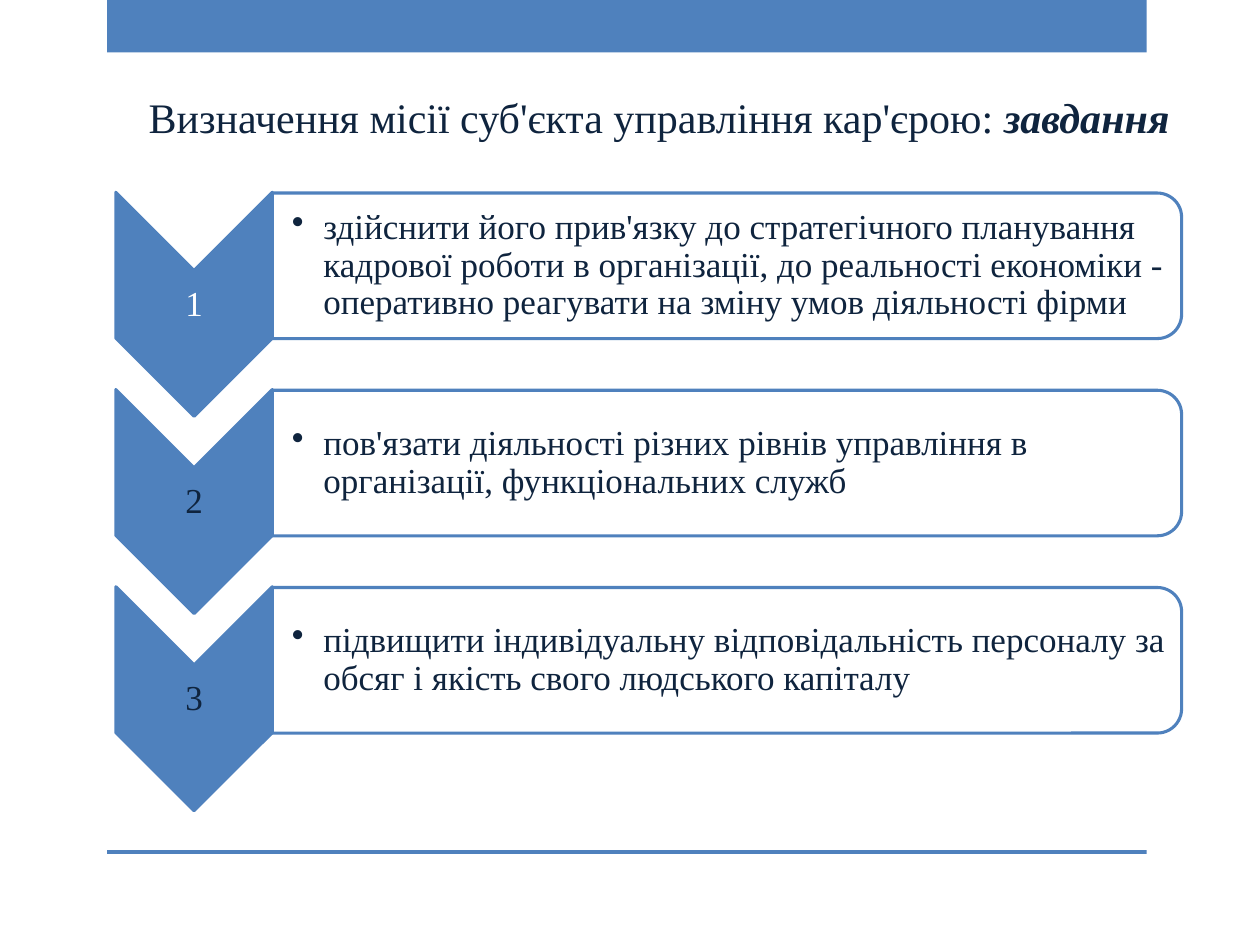
"""Build the slide on the tasks of defining a career management mission."""
from dataclasses import dataclass

from lxml import etree
from pptx import Presentation
from pptx.dml.color import RGBColor
from pptx.enum.shapes import MSO_SHAPE
from pptx.enum.text import MSO_ANCHOR, PP_ALIGN
from pptx.oxml.ns import qn
from pptx.util import Pt

RECTANGLE = MSO_SHAPE.RECTANGLE
CHEVRON = MSO_SHAPE.CHEVRON
ROUND_TOP = MSO_SHAPE.ROUND_2_SAME_RECTANGLE
MIDDLE = MSO_ANCHOR.MIDDLE
TOP = MSO_ANCHOR.TOP
LEFT = PP_ALIGN.LEFT
CENTER = PP_ALIGN.CENTER


@dataclass(frozen=True)
class Theme:
    font: str = "Times New Roman"
    accent: RGBColor = RGBColor(0x4F, 0x81, 0xBD)
    ink: RGBColor = RGBColor(0x0F, 0x24, 0x3E)
    white: RGBColor = RGBColor(0xFF, 0xFF, 0xFF)
    title_size: float = 24
    body_size: float = 20
    outline: float = 1.75


@dataclass(frozen=True)
class Span:
    text: str
    emphasis: bool = False


@dataclass(frozen=True)
class Task:
    number: str
    text: str
    number_color: RGBColor


THEME = Theme()
TASKS = (
    Task("1", "здійснити його прив'язку до стратегічного планування кадрової роботи "
         "в організації, до реальності економіки - оперативно реагувати на зміну "
         "умов діяльності фірми", THEME.white),
    Task("2", "пов'язати діяльності різних рівнів управління в організації, "
         "функціональних служб", THEME.ink),
    Task("3", "підвищити індивідуальну відповідальність персоналу за обсяг і якість "
         "свого людського капіталу", THEME.ink),
)
TITLE = (Span("Визначення місії суб'єкта управління кар'єрою: "),
         Span("завдання", emphasis=True))
FIRST_TOP = 114.4
TASK_STEP = 112.7


def add_figure(shapes, kind, left: float, top: float, width: float, height: float,
               fill: RGBColor, outlined: bool = False, turned: bool = False):
    """Draw a filled shape whose visible bounds are given, turned by 90 degrees if asked."""
    if turned:
        left += (width - height) / 2
        top += (height - width) / 2
        width, height = height, width
    figure = shapes.add_shape(kind, Pt(left), Pt(top), Pt(width), Pt(height))
    figure.shadow.inherit = False
    figure.rotation = 90 if turned else 0
    figure.fill.solid()
    figure.fill.fore_color.rgb = fill
    if outlined:
        figure.line.color.rgb = THEME.accent
        figure.line.width = Pt(THEME.outline)
    else:
        figure.line.fill.background()
    return figure


def add_text(shapes, spans: tuple[Span, ...], left: float, top: float, width: float,
             height: float, *, size: float = THEME.body_size,
             color: RGBColor = THEME.ink, align=LEFT, anchor=MIDDLE,
             inset: float = 0.9, left_inset: float = 0.9,
             spacing: float = 0.9, bullet: bool = False) -> None:
    """Place one paragraph of formatted spans in a text box."""
    box = shapes.add_textbox(Pt(left), Pt(top), Pt(width), Pt(height))
    frame = box.text_frame
    frame.word_wrap = True
    frame.vertical_anchor = anchor
    frame.margin_left = Pt(left_inset)
    frame.margin_top = frame.margin_right = frame.margin_bottom = Pt(inset)
    para = frame.paragraphs[0]
    if bullet:
        properties = para._p.get_or_add_pPr()
        properties.set("marL", str(Pt(18)))
        properties.set("indent", str(Pt(-18)))
        etree.SubElement(properties, qn("a:buChar"), char="•")
    para.alignment = align
    para.line_spacing = spacing
    for span in spans:
        run = para.add_run()
        run.text = span.text
        run.font.name = THEME.font
        run.font.size = Pt(size)
        run.font.color.rgb = color
        if span.emphasis:
            run.font.bold = run.font.italic = True


def add_task(shapes, task: Task, center: float) -> None:
    """Draw a numbered chevron and its panel, centred on the given panel height."""
    add_figure(shapes, CHEVRON, 66.2, center - 42, 89.4, 128, THEME.accent,
               outlined=True, turned=True)
    add_text(shapes, (Span(task.number),), 66.2, center + 3, 89.4, 38.4,
             color=task.number_color, align=CENTER)
    panel = add_figure(shapes, ROUND_TOP, 155.6, center - 41.6, 519.6, 83.2,
                       THEME.white, outlined=True, turned=True)
    tint = panel.fill._xPr.find(f".//{qn('a:srgbClr')}")
    etree.SubElement(tint, qn("a:alpha"), val="90000")
    add_text(shapes, (Span(task.text),), 155.6, center - 37.5, 516, 75,
             left_inset=11.2, bullet=True)


def main() -> None:
    """Assemble the slide and save the deck."""
    deck = Presentation()
    deck.slide_width, deck.slide_height = Pt(720), Pt(540)
    page = deck.slides.add_slide(deck.slide_layouts[6])
    add_figure(page.shapes, RECTANGLE, 61.2, 0, 594, 30, THEME.accent)
    add_figure(page.shapes, RECTANGLE, 61.2, 485.8, 594, 2.2, THEME.accent)
    add_text(page.shapes, TITLE, 77.8, 49, 610.6, 36, size=THEME.title_size,
             anchor=TOP, inset=3.6, left_inset=7.2, spacing=1.0)
    group = page.shapes.add_group_shape()
    for index, task in enumerate(TASKS):
        add_task(group.shapes, task, FIRST_TOP + 37.5 + index * TASK_STEP)
    deck.save("out.pptx")


if __name__ == "__main__":
    main()
